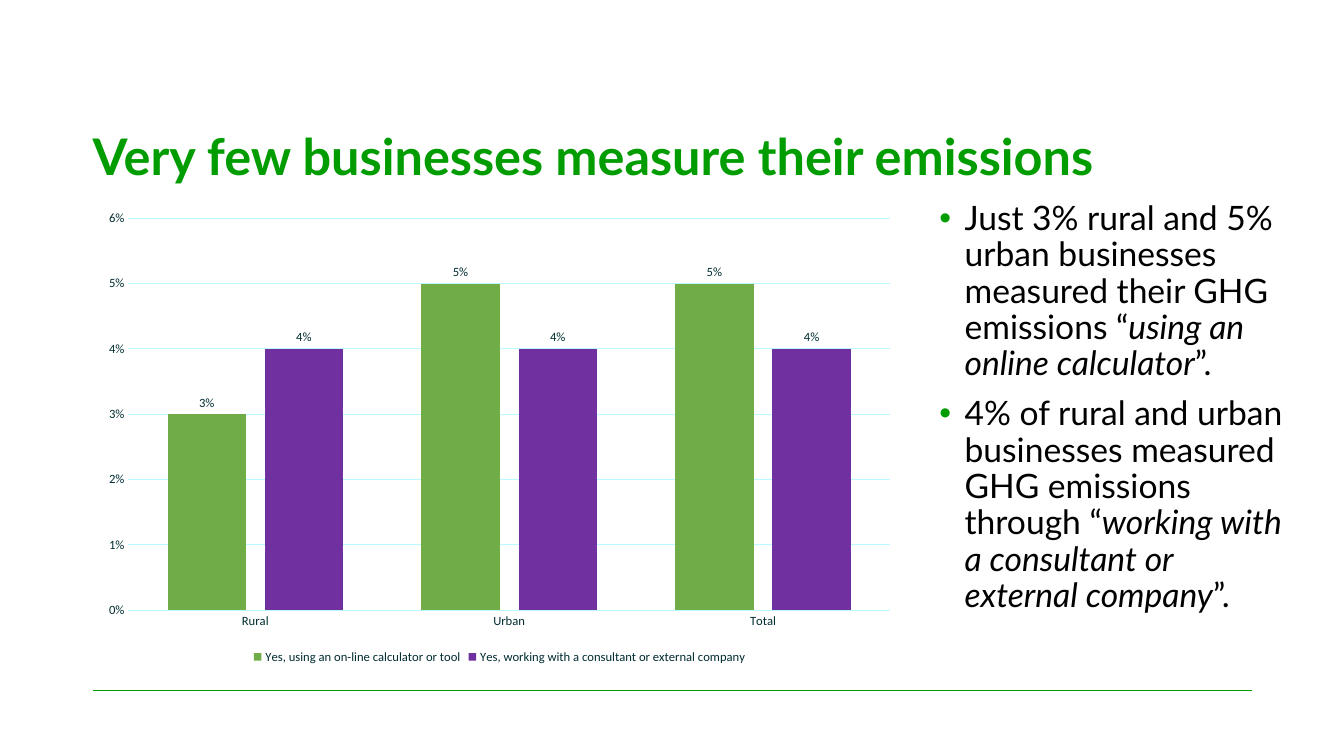
from dataclasses import dataclass

from lxml import etree
from pptx import Presentation
from pptx.chart.data import CategoryChartData
from pptx.dml.color import RGBColor
from pptx.enum.chart import XL_CHART_TYPE, XL_LABEL_POSITION, XL_LEGEND_POSITION, XL_TICK_MARK
from pptx.enum.shapes import MSO_CONNECTOR
from pptx.enum.text import MSO_ANCHOR, PP_ALIGN
from pptx.oxml.ns import qn
from pptx.util import Pt

COLUMNS = XL_CHART_TYPE.COLUMN_CLUSTERED
STRAIGHT = MSO_CONNECTOR.STRAIGHT
NO_TICK = XL_TICK_MARK.NONE
OUTSIDE_END = XL_LABEL_POSITION.OUTSIDE_END
LEGEND_BOTTOM = XL_LEGEND_POSITION.BOTTOM
BOTTOM = MSO_ANCHOR.BOTTOM
TOP = MSO_ANCHOR.TOP
LEFT = PP_ALIGN.LEFT

GREEN = "009C00"
BLACK = "000000"
CHART_INK = "002C30"
GRID = "BAF9FF"
MARGIN = 66.24
CONTENT_WIDTH = 828
CONTENT_TOP = 144
CONTENT_HEIGHT = 333.36
RULE_Y = 493.2
BULLET_INDENT = 18


@dataclass(frozen=True)
class Answer:
    name: str
    shares: tuple[float, ...]
    color: str


@dataclass(frozen=True)
class Finding:
    lead: str
    quote: str


REGIONS = ("Rural", "Urban", "Total")
ANSWERS = (
    Answer("Yes, using an on-line calculator or tool", (0.03, 0.05, 0.05), "70AD47"),
    Answer("Yes, working with a consultant or external company", (0.04, 0.04, 0.04), "7030A0"),
)
FINDINGS = (
    Finding("Just 3% rural and 5% urban businesses measured their GHG emissions “",
            "using an online calculator"),
    Finding("4% of rural and urban businesses measured GHG emissions through “",
            "working with a consultant or external company"),
)


def rgb(value: str) -> RGBColor:
    return RGBColor.from_string(value)


def apply(target, values: dict) -> None:
    for attribute, value in values.items():
        setattr(target, attribute, value)


def style_font(font, name: str, size: float, color: str, bold: bool = False) -> None:
    apply(font, {"name": name, "size": Pt(size), "bold": bold})
    font.color.rgb = rgb(color)


def style_chart_font(font) -> None:
    style_font(font, "Calibri", 9, CHART_INK)


def style_line(line, color: str, width: float) -> None:
    line.color.rgb = rgb(color)
    line.width = Pt(width)


def prepare_frame(frame, anchor) -> None:
    apply(frame, {"word_wrap": True, "vertical_anchor": anchor, "margin_left": 0,
                  "margin_right": 0, "margin_top": 0, "margin_bottom": 0})


def add_rule(slide) -> None:
    rule = slide.shapes.add_connector(STRAIGHT, Pt(MARGIN), Pt(RULE_Y),
                                      Pt(MARGIN + CONTENT_WIDTH), Pt(RULE_Y))
    style_line(rule.line, GREEN, 1)
    etree.SubElement(rule._element.spPr, qn("a:effectLst"))


def add_title(slide, text: str) -> None:
    title = slide.shapes.title
    apply(title, {"left": Pt(MARGIN), "top": Pt(51.84),
                  "width": Pt(CONTENT_WIDTH), "height": Pt(81.36)})
    prepare_frame(title.text_frame, BOTTOM)
    title.text_frame.text = text
    paragraph = title.text_frame.paragraphs[0]
    apply(paragraph, {"alignment": LEFT, "line_spacing": 0.9})
    style_font(paragraph.runs[0].font, "Lato", 36, GREEN, True)


def add_bullet(paragraph) -> None:
    properties = paragraph._p.get_or_add_pPr()
    properties.set("marL", str(Pt(BULLET_INDENT)))
    properties.set("indent", str(-Pt(BULLET_INDENT)))
    color = etree.SubElement(properties, qn("a:buClr"))
    etree.SubElement(color, qn("a:srgbClr"), val=GREEN)
    etree.SubElement(properties, qn("a:buFont"), typeface="Arial")
    etree.SubElement(properties, qn("a:buChar"), char="•")


def add_findings(slide, findings: tuple[Finding, ...]) -> None:
    box = slide.shapes.add_textbox(Pt(671.04), Pt(CONTENT_TOP), Pt(252.72), Pt(CONTENT_HEIGHT))
    frame = box.text_frame
    prepare_frame(frame, TOP)
    for index, finding in enumerate(findings):
        paragraph = frame.add_paragraph() if index else frame.paragraphs[0]
        add_bullet(paragraph)
        apply(paragraph, {"line_spacing": 0.9, "space_before": Pt(10 if index else 0)})
        for text, italic in ((finding.lead, False), (finding.quote, True), ("”.", False)):
            run = paragraph.add_run()
            run.text = text
            style_font(run.font, "Lato", 24, BLACK)
            run.font.italic = italic


def style_axes(chart) -> None:
    for axis in (chart.category_axis, chart.value_axis):
        apply(axis, {"major_tick_mark": NO_TICK, "minor_tick_mark": NO_TICK})
        style_chart_font(axis.tick_labels.font)
    style_line(chart.category_axis.format.line, GRID, 0.75)
    shares = chart.value_axis
    apply(shares, {"minimum_scale": 0, "maximum_scale": 0.06, "major_unit": 0.01,
                   "has_major_gridlines": True})
    shares.format.line.fill.background()
    style_line(shares.major_gridlines.format.line, GRID, 0.75)
    apply(shares.tick_labels, {"number_format": "0%", "number_format_is_linked": False})


def add_answer_chart(slide, answers: tuple[Answer, ...]) -> None:
    data = CategoryChartData(number_format="0%")
    data.categories = REGIONS
    for answer in answers:
        data.add_series(answer.name, answer.shares)
    chart = slide.shapes.add_chart(COLUMNS, Pt(MARGIN), Pt(CONTENT_TOP), Pt(581.04),
                                   Pt(CONTENT_HEIGHT), data).chart
    style_font(chart.font, "Calibri", 10, BLACK)
    apply(chart, {"has_title": False, "has_legend": True})
    apply(chart.legend, {"position": LEGEND_BOTTOM, "include_in_layout": False})
    style_chart_font(chart.legend.font)
    style_axes(chart)
    plot = chart.plots[0]
    apply(plot, {"gap_width": 100, "overlap": -24, "vary_by_categories": False})
    for series, answer in zip(plot.series, answers):
        series.format.fill.solid()
        series.format.fill.fore_color.rgb = rgb(answer.color)
        series.invert_if_negative = False
        labels = series.data_labels
        apply(labels, {"show_value": True, "position": OUTSIDE_END,
                       "number_format": "0%", "number_format_is_linked": False})
        style_chart_font(labels.font)


def main() -> None:
    deck = Presentation()
    apply(deck, {"slide_width": Pt(960), "slide_height": Pt(540)})
    slide = deck.slides.add_slide(deck.slide_layouts[5])
    add_rule(slide)
    add_title(slide, "Very few businesses measure their emissions")
    add_findings(slide, FINDINGS)
    add_answer_chart(slide, ANSWERS)
    deck.save("out.pptx")


if __name__ == "__main__":
    main()
